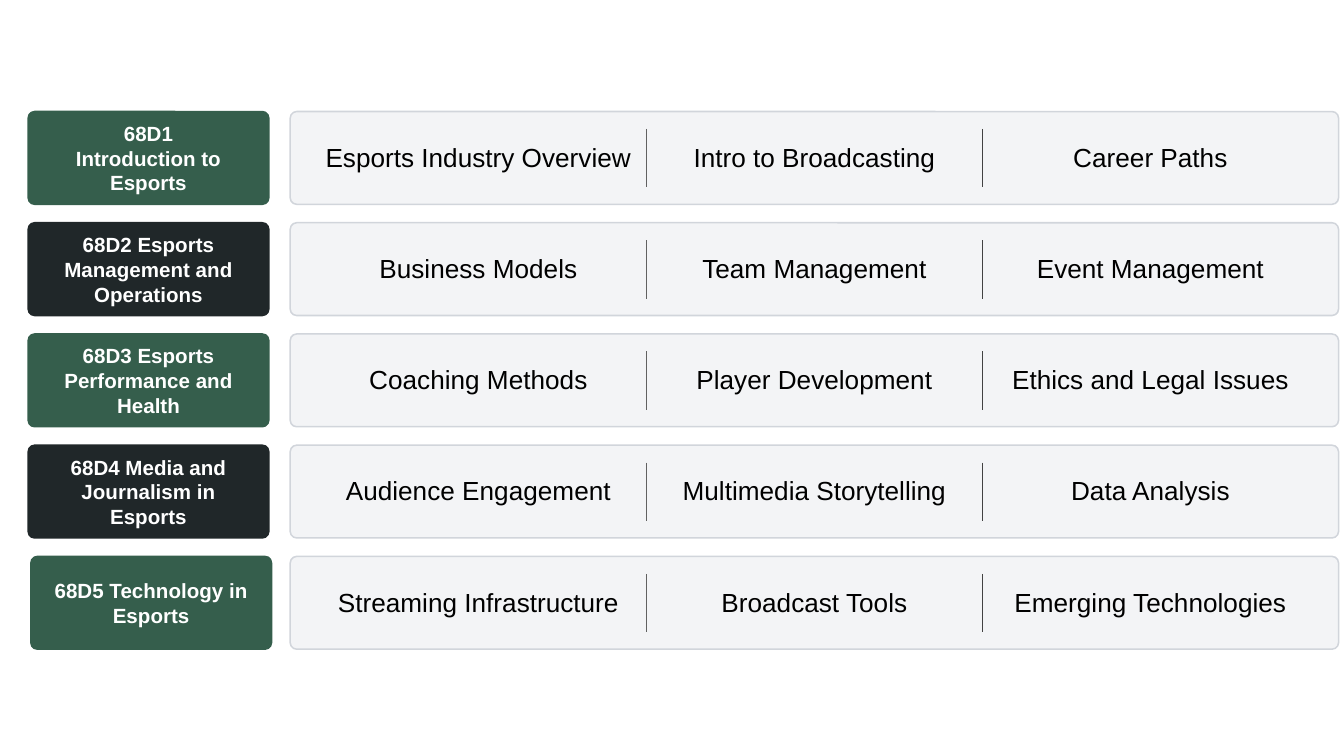
import pptx
import pptx.util
import pptx.dml.color
import pptx.enum.shapes
import pptx.enum.text
import pptx.oxml
import pptx.oxml.ns

Inches, Pt = pptx.util.Inches, pptx.util.Pt
ROUNDED = pptx.enum.shapes.MSO_SHAPE.ROUNDED_RECTANGLE
MIDDLE = pptx.enum.text.MSO_ANCHOR.MIDDLE
CENTER = pptx.enum.text.PP_ALIGN.CENTER

GREEN, DARK = "355E4C", "202729"
NO_STYLE_NO_GRID = "{2D5ABB26-0587-4C30-8999-92F81FD0307C}"
TOP, BOTTOM_ROW, CARD_H = 0.83, 4.14, 0.69
LABEL_W = 1.79
PANEL_X, PANEL_W = 2.16, 7.8
TABLE_X, TABLE_DY, COL_W, ROW_H = 2.31, 0.13, 2.5, 0.42
DIVIDERS = ["616161", "424242"]

# Label, colour, left edge, width and height of the label text, topics
MODULES = [
    ("68D1 Introduction to Esports", GREEN, 0.21, 1.37, 0.2,
     ["Esports Industry Overview", "Intro to Broadcasting", "Career Paths"]),
    ("68D2 Esports Management and Operations", DARK, 0.21, 1.54, 0.63,
     ["Business Models", "Team Management", "Event Management"]),
    ("68D3 Esports Performance and Health", GREEN, 0.21, 1.91, 0.46,
     ["Coaching Methods", "Player Development", "Ethics and Legal Issues"]),
    ("68D4 Media and Journalism in Esports", DARK, 0.21, 1.54, 0.67,
     ["Audience Engagement", "Multimedia Storytelling", "Data Analysis"]),
    ("68D5 Technology in Esports", GREEN, 0.23, 1.84, 0.57,
     ["Streaming Infrastructure", "Broadcast Tools", "Emerging Technologies"]),
]
PITCH = (BOTTOM_ROW - TOP) / (len(MODULES) - 1)


def rgb(color):
    return pptx.dml.color.RGBColor.from_string(color)


def write(tf, text, size, color, bold=False):
    tf.text = text
    p = tf.paragraphs[0]
    p.alignment = CENTER
    font = p.runs[0].font
    font.name, font.size, font.bold = "Arial", Pt(size), bold
    font.color.rgb = rgb(color)


def add_card(shapes, x, y, w, fill, line):
    s = shapes.add_shape(ROUNDED, Inches(x), Inches(y), Inches(w), Inches(CARD_H))
    s.adjustments[0] = 0.07
    s.shadow.inherit = False
    s.fill.solid()
    s.fill.fore_color.rgb = rgb(fill)
    s.line.color.rgb = rgb(line)
    s.line.width = Pt(0.81)


def add_label(slide, text, color, x, y, text_w, text_h):
    group = slide.shapes.add_group_shape()
    add_card(group.shapes, x, y, LABEL_W, color, color)
    # The text box is centred on the card
    box = group.shapes.add_textbox(
        Inches(x + (LABEL_W - text_w) / 2), Inches(y + (CARD_H - text_h) / 2),
        Inches(text_w), Inches(text_h))
    tf = box.text_frame
    tf.word_wrap = True
    tf.vertical_anchor = MIDDLE
    tf.margin_left = tf.margin_right = Inches(0.08)
    tf.margin_top = tf.margin_bottom = Inches(0.04)
    write(tf, text, 11, "FFFFFF", bold=True)


def set_border(cell, side, color, index):
    ln = pptx.oxml.parse_xml(
        f'<a:{side} {pptx.oxml.ns.nsdecls("a")} w="{Pt(0.75)}">'
        f'<a:solidFill><a:srgbClr val="{color}"/></a:solidFill></a:{side}>')
    cell._tc.get_or_add_tcPr().insert(index, ln)


def add_topics(slide, topics, y):
    table = slide.shapes.add_table(
        1, len(topics), Inches(TABLE_X), Inches(y),
        Inches(COL_W * len(topics)), Inches(ROW_H)).table
    table.first_row = table.horz_banding = False
    table._tbl.tblPr.find(pptx.oxml.ns.qn("a:tableStyleId")).text = NO_STYLE_NO_GRID
    for i, topic in enumerate(topics):
        cell = table.cell(0, i)
        cell.vertical_anchor = MIDDLE
        cell.margin_left = cell.margin_right = Inches(0.1)
        cell.margin_top = cell.margin_bottom = Inches(0.1)
        cell.fill.background()
        write(cell.text_frame, topic, 14, "000000")
    # Neighbouring cells share each divider
    for i, color in enumerate(DIVIDERS):
        set_border(table.cell(0, i), "lnR", color, min(i, 1))
        set_border(table.cell(0, i + 1), "lnL", color, 0)


def main():
    prs = pptx.Presentation()
    # Widescreen, 16:9
    prs.slide_width = Inches(10)
    prs.slide_height = Inches(10 * 9 / 16)
    slide = prs.slides.add_slide(prs.slide_layouts[6])

    # One row per course module
    for i, (label, color, x, text_w, text_h, topics) in enumerate(MODULES):
        y = TOP + i * PITCH
        add_label(slide, label, color, x, y, text_w, text_h)
        add_card(slide.shapes, PANEL_X, y, PANEL_W, "F3F4F6", "D1D5DB")
        add_topics(slide, topics, y + TABLE_DY)

    prs.save("out.pptx")


if __name__ == "__main__":
    main()
